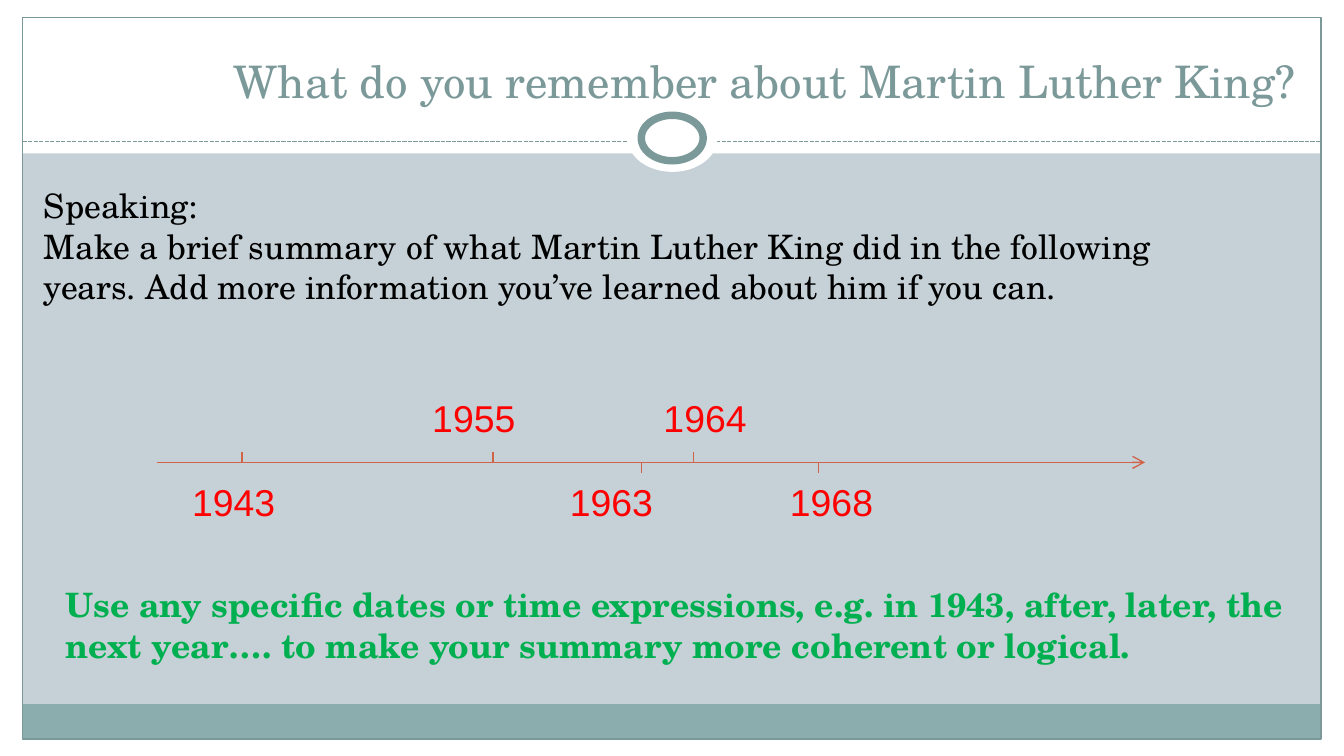
from dataclasses import dataclass

from lxml.etree import SubElement
from pptx import Presentation
from pptx.dml.color import RGBColor
from pptx.enum.dml import MSO_LINE
from pptx.enum.shapes import MSO_CONNECTOR, MSO_SHAPE
from pptx.enum.text import MSO_ANCHOR
from pptx.oxml.ns import qn
from pptx.util import Cm, Pt


@dataclass(frozen=True)
class Theme:
    background: str = "C5D1D7"
    white: str = "FFFFFF"
    band: str = "8CADAE"
    frame: str = "7C999A"
    axis: str = "D16349"
    year: str = "FF0000"
    body: str = "000000"
    hint: str = "00B050"
    serif: str = "TeX Gyre Schola"
    sans: str = "Arial"
    title_size: int = 24
    year_size: int = 20
    body_size: int = 18
    thin: float = 0.75
    thick: float = 4


class SlideBuilder:
    def __init__(self, slide, theme):
        self.s = slide
        self.t = theme

    def background(self, color):
        fill = self.s.background.fill
        fill.solid()
        fill.fore_color.rgb = RGBColor.from_string(color)

    def shape(self, box, fill=None, line=None, weight=None, kind=MSO_SHAPE.RECTANGLE):
        sp = self.s.shapes.add_shape(kind, *map(Cm, box))
        sp.shadow.inherit = False
        if fill:
            sp.fill.solid()
            sp.fill.fore_color.rgb = RGBColor.from_string(fill)
        else:
            sp.fill.background()
        if line:
            sp.line.color.rgb = RGBColor.from_string(line)
            sp.line.width = Pt(weight or self.t.thin)
        else:
            sp.line.fill.background()

    def line(self, start, end, color, dash=None, arrow=False):
        points = map(Cm, (*start, *end))
        c = self.s.shapes.add_connector(MSO_CONNECTOR.STRAIGHT, *points)
        c.line.color.rgb = RGBColor.from_string(color)
        c.line.width = Pt(self.t.thin)
        if dash:
            c.line.dash_style = dash
        if arrow:
            SubElement(c.line._get_or_add_ln(), qn("a:tailEnd"), type="arrow")
        SubElement(c._element.spPr, qn("a:effectLst"))

    def text(self, box, paragraphs, size, color, font=None, bold=False,
             anchor=MSO_ANCHOR.TOP):
        tf = self.s.shapes.add_textbox(*map(Cm, box)).text_frame
        tf.word_wrap = True
        tf.vertical_anchor = anchor
        for i, words in enumerate(paragraphs):
            p = tf.add_paragraph() if i else tf.paragraphs[0]
            r = p.add_run()
            r.text = words
            r.font.name = font or self.t.serif
            r.font.size = Pt(size)
            r.font.bold = bold
            r.font.color.rgb = RGBColor.from_string(color)


WIDTH, HEIGHT = 25.4, 14.29
MARGIN = 0.43
AXIS_Y, TICK = 8.74, 0.2

# year, tick position, left edge of label, label above the axis
YEARS = [
    ("1943", 4.57, 3.38, False),
    ("1955", 9.32, 7.92, True),
    ("1963", 12.12, 10.52, False),
    ("1964", 13.11, 12.29, True),
    ("1968", 15.47, 14.68, False),
]
TICKS_UP = {"1943", "1955", "1964"}


def main():
    t = Theme()
    prs = Presentation()
    prs.slide_width, prs.slide_height = Cm(WIDTH), Cm(HEIGHT)
    b = SlideBuilder(prs.slides.add_slide(prs.slide_layouts[6]), t)
    inner = WIDTH - 2 * MARGIN

    # White margins and header
    b.background(t.background)
    for box in [
        (0, 13.97, WIDTH, HEIGHT - 13.97),
        (0, 0, WIDTH, 2.9),
        (0, 0, MARGIN, HEIGHT),
        (WIDTH - MARGIN, 0, MARGIN, HEIGHT),
    ]:
        b.shape(box, t.white)

    # Footer band, frame and dashed rule
    b.shape((MARGIN, 13.31, inner, 0.64), t.band)
    b.shape((MARGIN, 0.33, inner, 13.64), line=t.frame)
    b.line((MARGIN, 2.67), (WIDTH - MARGIN, 2.67), t.frame, MSO_LINE.SQUARE_DOT)

    # Ring on the rule
    b.shape((11.86, 1.98, 1.7, 1.27), t.white, kind=MSO_SHAPE.OVAL)
    b.shape((12.12, 2.18, 1.17, 0.86), t.white, t.frame, t.thick, MSO_SHAPE.OVAL)

    # Title
    b.text((4.17, 0.58, 23.7, 1.57),
           ["What do you remember about Martin Luther King?"],
           t.title_size, t.frame, anchor=MSO_ANCHOR.BOTTOM)

    # Timeline
    b.line((2.97, AXIS_Y), (21.64, AXIS_Y), t.axis, arrow=True)
    for year, x, left, above in YEARS:
        top = AXIS_Y - TICK if year in TICKS_UP else AXIS_Y
        b.line((x, top), (x, top + TICK), t.axis)
        b.text((left, 7.34 if above else 8.94, 2.77, 1.12), [year],
               t.year_size, t.year, t.sans)

    # Task and hint
    b.text((0.58, 3.38, 22.81, 2.57),
           ["Speaking:",
            "Make a brief summary of what Martin Luther King did in the following "
            "years. Add more information you’ve learned about him if you can."],
           t.body_size, t.body)
    b.text((0.99, 10.92, 23.83, 1.8),
           ["Use any specific dates or time expressions, e.g. in 1943, after, later, "
            "the next year…. to make your summary more coherent or logical."],
           t.body_size, t.hint, bold=True)

    prs.save("out.pptx")


if __name__ == "__main__":
    main()
